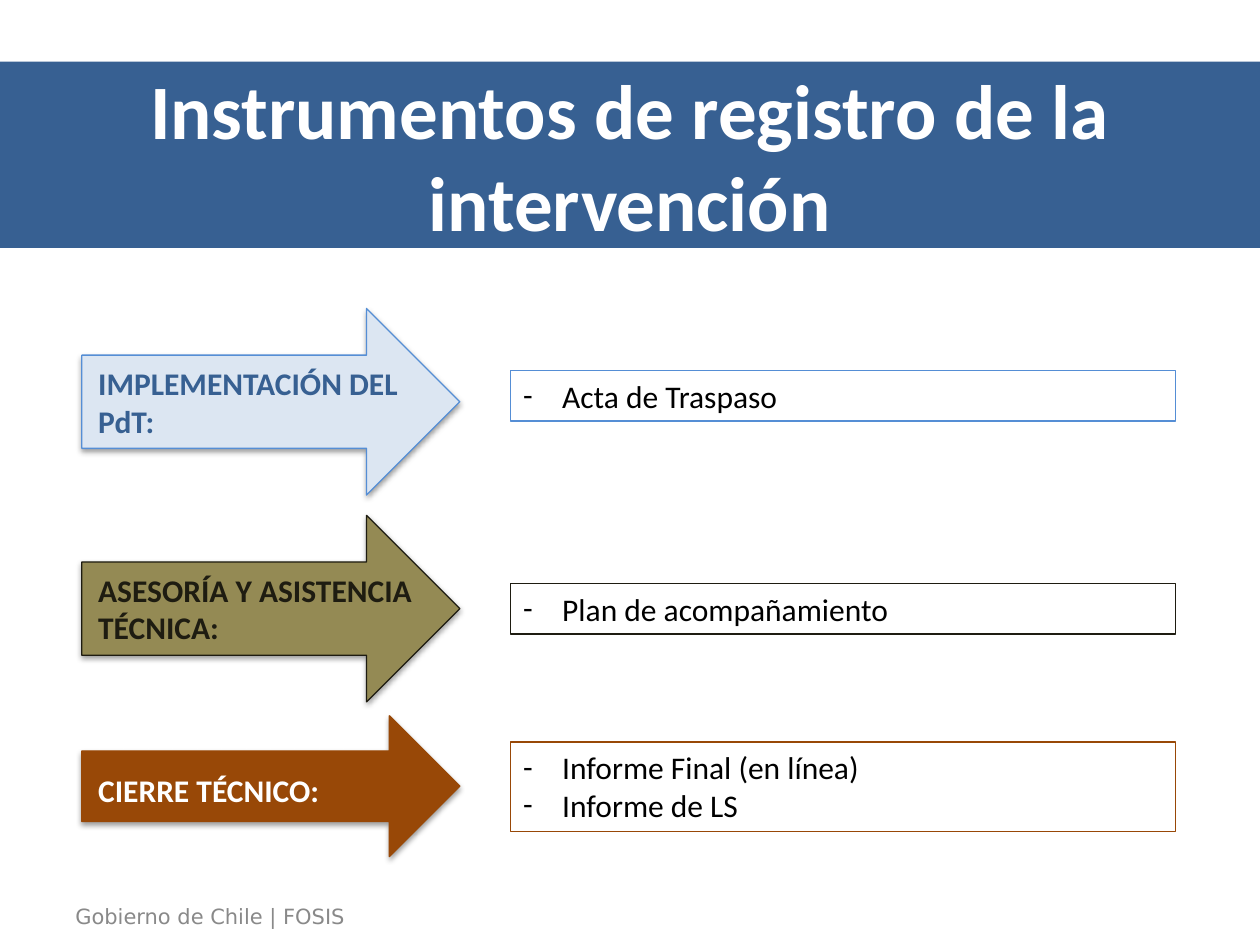
from lxml.etree import SubElement
from pptx import Presentation
from pptx.dml.color import RGBColor
from pptx.enum.shapes import MSO_SHAPE as Kind
from pptx.enum.text import MSO_ANCHOR as Anchor, MSO_AUTO_SIZE as Fit, PP_ALIGN as Align
from pptx.oxml import parse_xml
from pptx.oxml.ns import nsdecls, qn
from pptx.util import Cm, Pt

WHITE = RGBColor(0xFF, 0xFF, 0xFF)
BLACK = RGBColor(0, 0, 0)
GRAY = RGBColor(0x89, 0x89, 0x89)
NAVY = RGBColor(0x37, 0x60, 0x92)
BLUE = RGBColor(0x55, 0x8E, 0xD5)
PALE = RGBColor(0xDC, 0xE6, 0xF2)
OLIVE = RGBColor(0x94, 0x8A, 0x54)
DARK = RGBColor(0x1E, 0x1C, 0x11)
RUST = RGBColor(0x98, 0x48, 0x07)

TITLE = "Instrumentos de registro de la intervención"
FOOTER = "Gobierno de Chile | FOSIS"

# Lengths in cm; "slot" is the layout placeholder that holds the list
STAGES = [
    dict(label="IMPLEMENTACIÓN DEL PdT:", wide=7.67, items=["Acta de Traspaso"],
         top=6.22, tall=3.76, list_top=7.47, slot=1, fill=PALE, line=BLUE, ink=NAVY),
    dict(label="ASESORÍA Y ASISTENCIA TÉCNICA:", wide=7.54, items=["Plan de acompañamiento"],
         top=10.39, tall=3.76, list_top=11.76, slot=2, fill=OLIVE, line=DARK, ink=DARK),
    dict(label="CIERRE TÉCNICO:", wide=7.11, items=["Informe Final (en línea)", "Informe de LS"],
         top=14.43, tall=2.84, list_top=14.96, slot=4, fill=RUST, line=RUST, ink=WHITE),
]
SPARE = 3
ROW, PAD = 0.78, 0.24
SHADOW = (f'<a:effectLst {nsdecls("a")}><a:outerShdw blurRad="40000" dist="20000" '
          'dir="5400000" rotWithShape="0"><a:srgbClr val="000000">'
          '<a:alpha val="38000"/></a:srgbClr></a:outerShdw></a:effectLst>')


def place(shape, left, top, wide, tall):
    shape.left, shape.top = Cm(left), Cm(top)
    shape.width, shape.height = Cm(wide), Cm(tall)


def write(para, text, size, color, bold=False, font="Calibri"):
    run = para.add_run()
    run.text = text
    run.font.name, run.font.size = font, Pt(size)
    run.font.bold, run.font.color.rgb = bold, color


def add_text(slide, left, top, wide, tall, wrap=True):
    """Add an empty text box and return its first paragraph."""
    frame = slide.shapes.add_textbox(Cm(left), Cm(top), Cm(wide), Cm(tall)).text_frame
    frame.word_wrap = wrap
    return frame.paragraphs[0]


def outline(shape, color):
    shape.line.color.rgb = color
    shape.line.width = Pt(0.75)


def add_arrow(slide, stage):
    arrow = slide.shapes.add_shape(Kind.RIGHT_ARROW, Cm(1.65), Cm(stage["top"]),
                                   Cm(7.62), Cm(stage["tall"]))
    arrow.fill.solid()
    arrow.fill.fore_color.rgb = stage["fill"]
    outline(arrow, stage["line"])
    arrow.element.spPr.append(parse_xml(SHADOW))


def fill_list(box, stage):
    items = stage["items"]
    place(box, 10.29, stage["list_top"], 13.41, len(items) * ROW + PAD)
    outline(box, stage["line"])
    frame = box.text_frame
    frame.auto_size, frame.vertical_anchor = Fit.NONE, Anchor.TOP
    for i, item in enumerate(items):
        para = frame.add_paragraph() if i else frame.paragraphs[0]
        props = para._p.get_or_add_pPr()
        props.set("marL", str(Cm(0.79)))
        props.set("indent", str(-Cm(0.79)))
        SubElement(props, qn("a:buFont")).set("typeface", "Calibri")
        SubElement(props, qn("a:buChar")).set("char", "-")
        para.space_before = Pt(0)
        write(para, item, 18, BLACK)


def fill_title(box):
    place(box, 0, 1.24, 25.4, 3.76)
    box.fill.solid()
    box.fill.fore_color.rgb = NAVY
    frame = box.text_frame
    frame.auto_size, frame.vertical_anchor = Fit.NONE, Anchor.MIDDLE
    frame.margin_top = frame.margin_bottom = Cm(0.25)
    para = frame.paragraphs[0]
    para.alignment = Align.CENTER
    write(para, TITLE, 44, WHITE, True)


def main():
    deck = Presentation()
    deck.slide_width, deck.slide_height = Cm(25.4), Cm(19.05)
    slide = deck.slides.add_slide(deck.slide_layouts.get_by_name("Comparison"))
    slots = {box.placeholder_format.idx: box for box in slide.placeholders}
    spare = slots[SPARE].element
    spare.getparent().remove(spare)

    fill_title(slide.shapes.title)
    for stage in STAGES:
        add_arrow(slide, stage)
        para = add_text(slide, 1.73, stage["top"] + 0.99, stage["wide"], 1.8)
        write(para, stage["label"], 18, stage["ink"], True)
        fill_list(slots[stage["slot"]], stage)
    para = add_text(slide, 1.27, 18.08, 6.17, 0.76, wrap=False)
    write(para, FOOTER, 12, GRAY, font="DejaVu Sans")
    deck.save("out.pptx")


if __name__ == "__main__":
    main()
